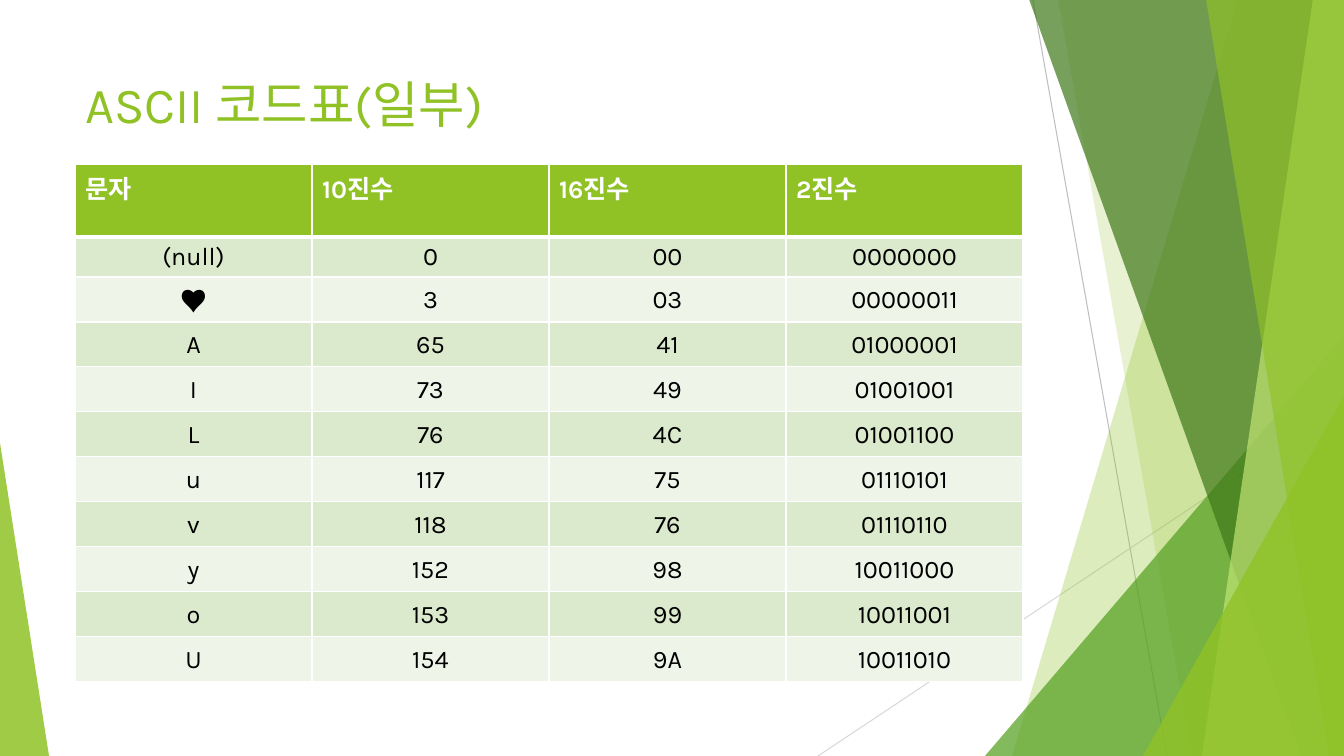
"""Build the ASCII code table slide with its green faceted decoration."""
from dataclasses import dataclass

from lxml.etree import SubElement
from pptx import Presentation
from pptx.dml.color import RGBColor
from pptx.enum.shapes import MSO_CONNECTOR as Connector
from pptx.enum.shapes import MSO_SHAPE as Shape
from pptx.enum.text import MSO_ANCHOR as Anchor
from pptx.enum.text import MSO_AUTO_SIZE as AutoSize
from pptx.enum.text import PP_ALIGN as Align
from pptx.oxml.ns import qn
from pptx.util import Pt

EMU_PER_PX = 914400 / 100.8
WIDTH, HEIGHT = 1344, 756
TITLE_ONLY = 5

HEADERS = ["문자", "10진수", "16진수", "2진수"]
CODES = [
    ["(null)", "0", "00", "0000000"],
    ["♥", "3", "03", "00000011"],
    ["A", "65", "41", "01000001"],
    ["I", "73", "49", "01001001"],
    ["L", "76", "4C", "01001100"],
    ["u", "117", "75", "01110101"],
    ["v", "118", "76", "01110110"],
    ["y", "152", "98", "10011000"],
    ["o", "153", "99", "10011001"],
    ["U", "154", "9A", "10011010"],
]


@dataclass(frozen=True)
class Theme:
    """Colours, font and type sizes of the slide."""
    font: str = "Karla"
    title_size: int = 36
    table_size: int = 18
    green: str = "90C226"
    leaf: str = "54A021"
    forest: str = "3F7819"
    lime: str = "C0E474"
    bands: tuple = ("DBE9CD", "EEF4E8")
    grey: str = "BFBFBF"
    light_grey: str = "D9D9D9"
    white: str = "FFFFFF"
    black: str = "000000"


def px(length):
    """Turn pixels into EMU."""
    return round(length * EMU_PER_PX)


def write(frame, text, *, font, size, color, bold=False, align=Align.LEFT):
    """Put one formatted paragraph into a text frame."""
    paragraph = frame.paragraphs[0]
    paragraph.alignment = align
    run = paragraph.add_run()
    run.text = text
    run.font.name = font
    run.font.size = Pt(size)
    run.font.bold = bold
    run.font.color.rgb = RGBColor.from_string(color)


class SlideBuilder:
    """Draw styled elements on one slide."""

    def __init__(self, slide, theme):
        self.slide = slide
        self.theme = theme

    def title(self, text, left, top, width, height):
        """Place and fill the title placeholder."""
        shape = self.slide.shapes.title
        shape.left, shape.top = px(left), px(top)
        shape.width, shape.height = px(width), px(height)
        frame = shape.text_frame
        frame.word_wrap = True
        frame.auto_size = AutoSize.NONE
        frame.vertical_anchor = Anchor.TOP
        write(frame, text, font=self.theme.font, size=self.theme.title_size,
              color=self.theme.green)

    def line(self, start, end, color):
        """Draw a thin straight line."""
        connector = self.slide.shapes.add_connector(
            Connector.STRAIGHT, *map(px, start + end))
        connector.line.color.rgb = RGBColor.from_string(color)
        connector.line.width = Pt(0.75)
        SubElement(connector._element.spPr, qn("a:effectLst"))

    def paint(self, shape, color, opacity):
        """Give a shape a translucent fill without outline or shadow."""
        shape.shadow.inherit = False
        shape.line.fill.background()
        shape.fill.solid()
        shape.fill.fore_color.rgb = RGBColor.from_string(color)
        fill_color = shape._element.spPr.find(".//" + qn("a:srgbClr"))
        SubElement(fill_color, qn("a:alpha"), val=str(opacity * 1000))

    def band(self, top_left, bottom_left, color, opacity):
        """Draw a full-height facet reaching the right slide edge."""
        corners = [(top_left, -1), (WIDTH, -1), (WIDTH, HEIGHT), (bottom_left, HEIGHT)]
        start, *rest = [(px(x), px(y)) for x, y in corners]
        builder = self.slide.shapes.build_freeform(*start)
        builder.add_line_segments(rest, close=True)
        self.paint(builder.convert_to_shape(), color, opacity)

    def triangle(self, left, top, width, apex, color, opacity):
        """Draw a triangle standing on the bottom slide edge."""
        shape = self.slide.shapes.add_shape(
            Shape.ISOSCELES_TRIANGLE, px(left), px(top), px(width), px(HEIGHT - top))
        shape.adjustments[0] = apex
        self.paint(shape, color, opacity)

    def border(self, cell, **widths):
        """Set white cell borders, with widths in points by side."""
        properties = cell._tc.get_or_add_tcPr()
        for side in "LRTB":
            line = SubElement(properties, qn(f"a:ln{side}"),
                              w=str(Pt(widths.get(side, 1))))
            fill = SubElement(line, qn("a:solidFill"))
            SubElement(fill, qn("a:srgbClr"), val=self.theme.white)

    def cell(self, cell, text, row):
        """Style and fill one table cell according to its row."""
        theme = self.theme
        is_header = row == 0
        if row > 1:
            cell.vertical_anchor = Anchor.MIDDLE
            cell.margin_top, cell.margin_bottom = px(8), px(7)
        self.border(cell, B=3 if is_header else 1, T=3 if row == 1 else 1)
        cell.fill.solid()
        cell.fill.fore_color.rgb = RGBColor.from_string(
            theme.green if is_header else theme.bands[(row - 1) % 2])
        write(cell.text_frame, text, font=theme.font, size=theme.table_size,
              color=theme.white if is_header else theme.black, bold=is_header,
              align=Align.LEFT if is_header else Align.CENTER)

    def table(self, rows, left, top, column_width, heights):
        """Draw a banded table with equal columns."""
        columns = len(rows[0])
        table = self.slide.shapes.add_table(
            len(rows), columns, px(left), px(top),
            px(column_width * columns), px(sum(heights))).table
        table.horz_banding = False
        for column in table.columns:
            column.width = px(column_width)
        for index, (texts, height) in enumerate(zip(rows, heights)):
            table.rows[index].height = px(height)
            for column, text in enumerate(texts):
                self.cell(table.cell(index, column), text, index)


def main():
    """Compose the slide and save it."""
    presentation = Presentation()
    presentation.slide_width, presentation.slide_height = px(WIDTH), px(HEIGHT)
    slide = presentation.slides.add_slide(presentation.slide_layouts[TITLE_ONLY])
    theme = Theme()
    builder = SlideBuilder(slide, theme)

    builder.line((1033, 0), (1167, HEIGHT), theme.grey)
    builder.line((WIDTH, 406), (818, HEIGHT), theme.light_grey)
    builder.band(1238, 1012, theme.green, 30)
    builder.band(1058, 1192, theme.green, 20)
    builder.triangle(985, 336, 359, 1, theme.leaf, 72)
    builder.band(1029, 1301, theme.forest, 70)
    builder.band(1313, 1202, theme.lime, 70)
    builder.band(1206, 1329, theme.green, 65)
    builder.triangle(1143, 396, 201, 1, theme.green, 80)
    builder.triangle(0, 443, 49, 0, theme.green, 85)

    builder.title("ASCII 코드표(일부)", 75, 68, 948, 145)
    heights = [73, 40] + [45] * (len(CODES) - 1)
    builder.table([HEADERS] + CODES, 75, 164, 237, heights)
    presentation.save("out.pptx")


if __name__ == "__main__":
    main()
